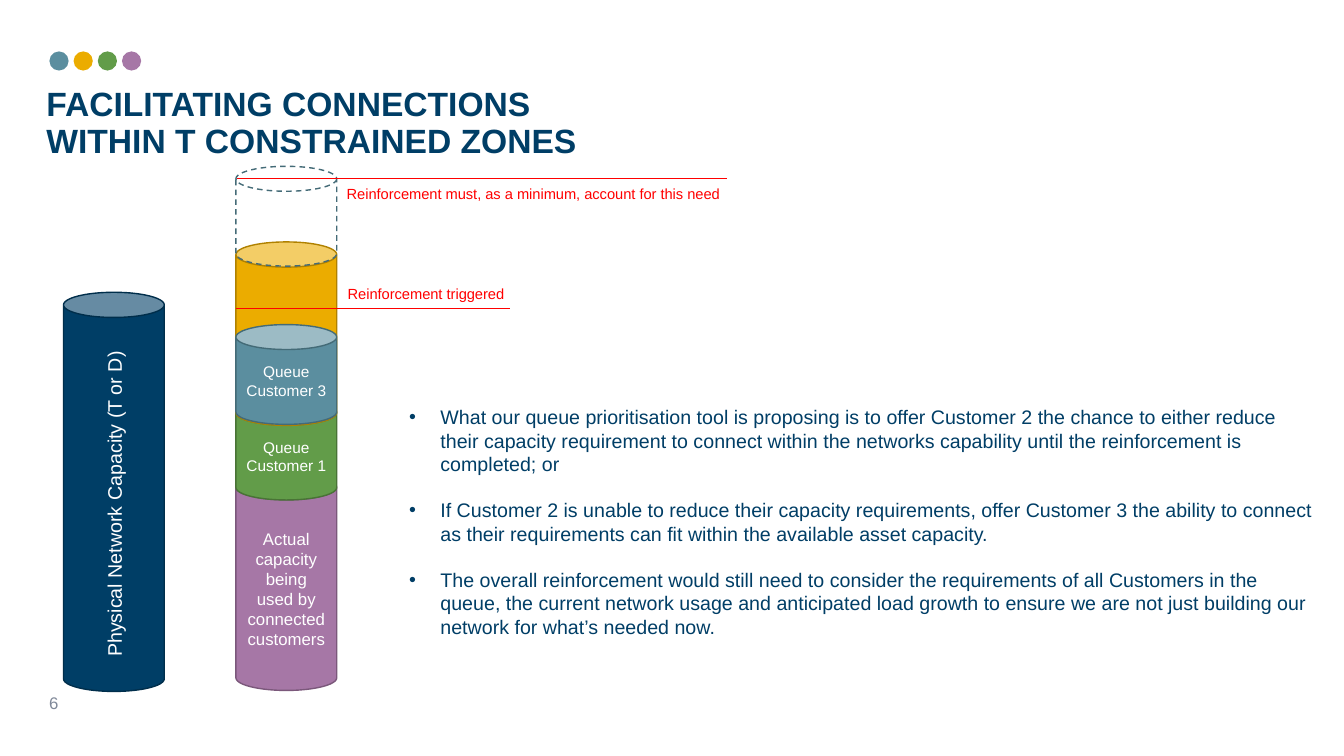
from lxml import etree
from pptx import Presentation
from pptx import util as u
from pptx.dml.color import RGBColor
from pptx.enum import dml, shapes, text
from pptx.oxml.ns import qn

PX = 9144  # EMU per px, 100 px to the inch
FONT = "Arial"
COLORS = {
    "navy": "003E66", "navy_edge": "002E4B",
    "purple": "A677A6", "purple_edge": "7B587B",
    "green": "629C49", "green_edge": "497336",
    "yellow": "EBAC00", "yellow_edge": "B08100",
    "blue": "5B8E9F", "blue_edge": "446B77",
    "white": "FFFFFF", "red": "FF0000", "gray": "808999",
}

TITLE = "FACILITATING CONNECTIONS WITHIN T CONSTRAINED ZONES"
DOTS = ["blue", "yellow", "green", "purple"]
# colour, left, top, height, label, label size; back to front
STACK_LEFT = 234
CANS = [
    ("navy", 63, 290, 396, "", 14),
    ("purple", STACK_LEFT, 471, 214, "Actual capacity being used by connected customers", 12),
    ("green", STACK_LEFT, 397, 99, "Queue Customer 1", 11),
    ("yellow", STACK_LEFT, 240, 182, "", 11),
    ("blue", STACK_LEFT, 322, 99, "Queue Customer 3", 11),
]
NEED_CAN = (STACK_LEFT, 165, 100, 99)
CAPACITY_LABEL = "Physical Network Capacity (T or D)"
# label, label box, line start x, line end x, line y
THRESHOLDS = [
    ("Reinforcement triggered", (335, 278, 186, 29), 234, 506, 306),
    ("Reinforcement must, as a minimum, account for this need", (334, 178, 401, 28), 235, 721, 177),
]
PROPOSALS = [
    "What our queue prioritisation tool is proposing is to offer Customer 2 the chance to either reduce "
    "their capacity requirement to connect within the networks capability until the reinforcement is "
    "completed; or",
    "If Customer 2 is unable to reduce their capacity requirements, offer Customer 3 the ability to connect "
    "as their requirements can fit within the available asset capacity.",
    "The overall reinforcement would still need to consider the requirements of all Customers in the queue, "
    "the current network usage and anticipated load growth to ensure we are not just building our network "
    "for what’s needed now.",
]
PAGE = "6"


def px(*lengths):
    return [u.Emu(length * PX) for length in lengths]


def rgb(name):
    return RGBColor.from_string(COLORS[name])


def add_run(paragraph, words, size, color, bold=False):
    run = paragraph.add_run()
    run.text = words
    font = run.font
    font.name, font.size, font.bold = FONT, u.Pt(size), bold
    font.color.rgb = rgb(color)


def add_label(slide, words, box, size, color, wrap=True):
    label = slide.shapes.add_textbox(*px(*box))
    label.text_frame.word_wrap = wrap
    add_run(label.text_frame.paragraphs[0], words, size, color)
    return label


def add_solid(slide, kind, box, fill=None, edge=None):
    """Add a shadowless preset shape, with fill and outline only where named."""
    solid = slide.shapes.add_shape(kind, *px(*box))
    solid.shadow.inherit = False
    if fill:
        solid.fill.solid()
        solid.fill.fore_color.rgb = rgb(fill)
    else:
        solid.fill.background()
    if edge:
        solid.line.color.rgb = rgb(edge)
        solid.line.width = u.Pt(1)
    else:
        solid.line.fill.background()
    return solid


def add_can(slide, color, left, top, height, words, size):
    can = add_solid(slide, shapes.MSO_SHAPE.CAN, (left, top, 100, height), color, color + "_edge")
    if words:
        frame = can.text_frame
        frame.word_wrap = True
        frame.vertical_anchor = text.MSO_ANCHOR.MIDDLE
        frame.paragraphs[0].alignment = text.PP_ALIGN.CENTER
        add_run(frame.paragraphs[0], words, size, "white")


def add_threshold(slide, words, box, start, end, y):
    add_label(slide, words, box, 10.5, "red")
    line = slide.shapes.add_connector(shapes.MSO_CONNECTOR.STRAIGHT, *px(start, y, end, y))
    line.line.color.rgb = rgb("red")
    line.line.width = u.Pt(0.5)
    etree.SubElement(line._element.spPr, qn("a:effectLst"))


def add_proposals(slide):
    frame = slide.shapes.add_textbox(*px(396, 397, 918, 269)).text_frame
    frame.word_wrap = True
    for i, proposal in enumerate(PROPOSALS):
        paragraph = frame.paragraphs[0] if i == 0 else frame.add_paragraph()
        if i:
            paragraph.space_before = u.Pt(16)
        properties = paragraph._p.get_or_add_pPr()
        properties.set("marL", str(31 * PX))
        properties.set("indent", str(-31 * PX))
        etree.SubElement(properties, qn("a:buFont"), typeface=FONT)
        etree.SubElement(properties, qn("a:buChar"), char="•")
        add_run(paragraph, proposal, 14, "navy")


def set_title(slide):
    title = slide.shapes.title
    title.left, title.top, title.width, title.height = px(46, 87, 579, 76)
    frame = title.text_frame
    frame.margin_left = frame.margin_top = frame.margin_right = frame.margin_bottom = 0
    frame.word_wrap = True
    frame.auto_size = text.MSO_AUTO_SIZE.NONE
    frame.vertical_anchor = text.MSO_ANCHOR.TOP
    heading = frame.paragraphs[0]
    heading.alignment = text.PP_ALIGN.LEFT
    heading.line_spacing = 0.9
    add_run(heading, TITLE, 24, "navy", bold=True)


def main():
    deck = Presentation()
    deck.slide_width, deck.slide_height = px(1333, 750)
    slide = deck.slides.add_slide(deck.slide_layouts[5])
    set_title(slide)
    add_label(slide, PAGE, (39, 682, 73, 30), 12, "gray")
    for i, color in enumerate(DOTS):
        add_solid(slide, shapes.MSO_SHAPE.OVAL, (49 + 24 * i, 51, 19, 19), color)
    for can in CANS:
        add_can(slide, *can)
    need = add_solid(slide, shapes.MSO_SHAPE.CAN, NEED_CAN, edge="blue_edge")
    need.line.dash_style = dml.MSO_LINE.DASH
    capacity = add_label(slide, CAPACITY_LABEL, (-49, 482, 325, 34), 14, "white", wrap=False)
    capacity.rotation = 270
    for threshold in THRESHOLDS:
        add_threshold(slide, *threshold)
    add_proposals(slide)
    deck.save("out.pptx")


if __name__ == "__main__":
    main()
